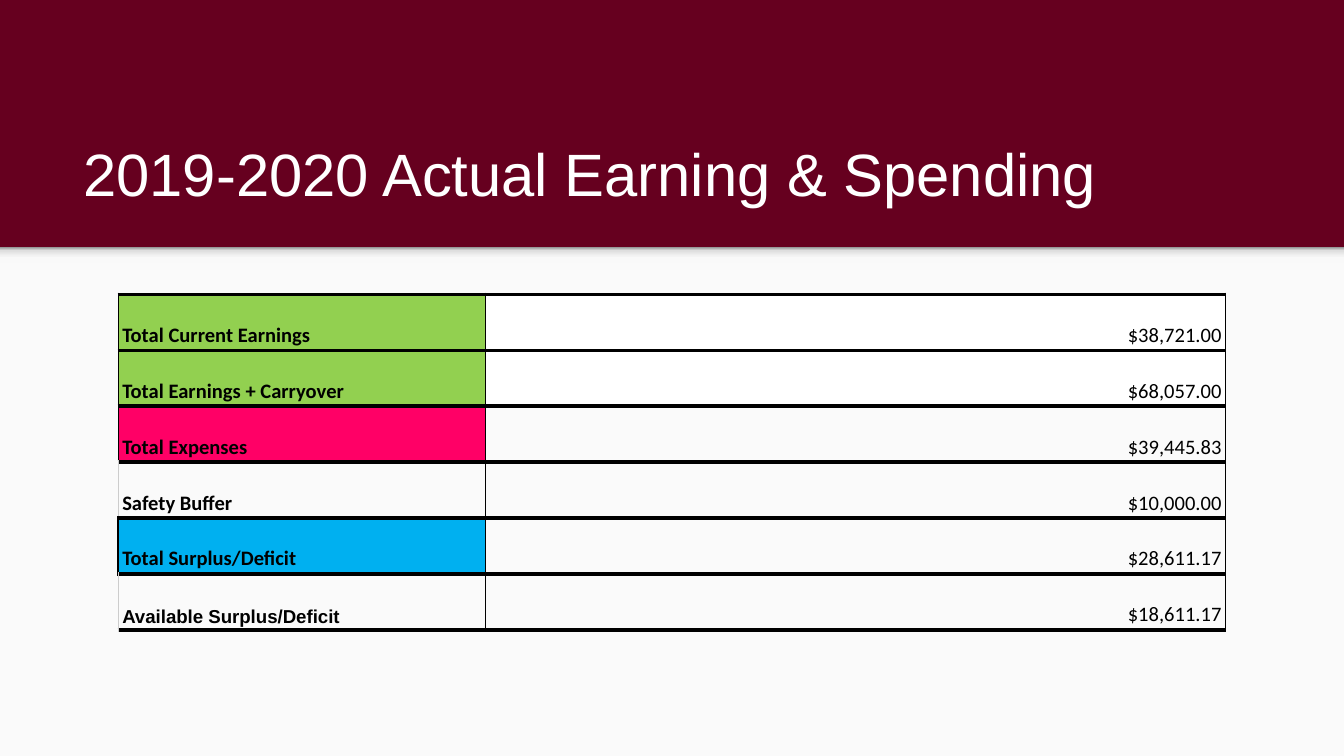
from copy import deepcopy
from dataclasses import dataclass

from lxml import etree
from pptx import Presentation
from pptx import util as u
from pptx.dml.color import RGBColor
from pptx.enum import shapes, text
from pptx.oxml.ns import qn


@dataclass(frozen=True)
class Theme:
    wine: str = "66001F"
    panel: str = "FAFAFA"
    white: str = "FFFFFF"
    ink: str = "000000"
    pale: str = "CCCCCC"
    green: str = "92D050"
    pink: str = "FF0066"
    blue: str = "00B0F0"
    head: str = "Arial"
    body: str = "Calibri"
    big: int = 32
    mid: int = 11
    small: int = 10


T = Theme()
WIDE = 10
HIGH = WIDE * 9 / 16
SPLIT = 1.84
COLS = (2.73, 5.51)
SHADE = ((0, "F9F9F9"), (0.36, "F9F9F9"), (0.8, "DEDEDE"), (1, "999999"))

# label, amount, label fill, amount fill, left edge colour and width
ROWS = (
    ("Total Current Earnings", "$38,721.00", T.green, T.white, T.ink, 0.75),
    ("Total Earnings + Carryover", "$68,057.00", T.green, T.white, T.ink, 0.75),
    ("Total Expenses", "$39,445.83", T.pink, None, T.ink, 0.75),
    ("Safety Buffer", "$10,000.00", None, None, T.pale, 0.75),
    ("Total Surplus/Deficit", "$28,611.17", T.blue, None, T.ink, 1.5),
    ("Available Surplus/Deficit", "$18,611.17", None, None, T.pale, 0.75),
)
TALL = 2.5
ROW = TALL / len(ROWS)


def rgb(code):
    return RGBColor.from_string(code)


def paint(fill, code):
    if code:
        fill.solid()
        fill.fore_color.rgb = rgb(code)
    else:
        fill.background()


def write(frame, words, size=T.mid, font=T.body, color=T.ink, bold=False,
          align=text.PP_ALIGN.LEFT, space=1.0):
    para = frame.paragraphs[0]
    para.alignment, para.line_spacing = align, space
    run = para.add_run()
    run.text = words
    run.font.size, run.font.name, run.font.bold = u.Pt(size), font, bold
    run.font.color.rgb = rgb(color)


def band(slide, top, high):
    """Add a plain rectangle across the full slide width."""
    box = slide.shapes.add_shape(shapes.MSO_SHAPE.RECTANGLE, 0, u.Inches(top),
                                 u.Inches(WIDE), u.Inches(high))
    box.shadow.inherit = False
    box.line.fill.background()
    return box


def shade(box):
    """Fill a shape with the soft shadow gradient, darkest at its top."""
    box.fill.gradient()
    box.fill.gradient_angle = 90
    stops = box._element.spPr.find(".//" + qn("a:gsLst"))
    for _ in SHADE[2:]:
        stops.append(deepcopy(stops[0]))
    for stop, (pos, code) in zip(box.fill.gradient_stops, SHADE):
        stop.position = pos
        stop.color.rgb = rgb(code)


def edge(cell, left, width):
    """Draw the cell's borders; only the left one varies."""
    props = cell._tc.get_or_add_tcPr()
    sides = (("L", left, width), ("R", T.ink, 0.75),
             ("T", T.ink, 2.25), ("B", T.ink, 2.25))
    for spot, (side, code, size) in enumerate(sides):
        line = etree.Element(qn("a:ln" + side), w=str(u.Pt(size)))
        solid = etree.SubElement(line, qn("a:solidFill"))
        etree.SubElement(solid, qn("a:srgbClr"), val=code)
        props.insert(spot, line)


def fit(cell, words, fill, left=T.ink, width=0.75, **style):
    cell.margin_left = cell.margin_right = u.Inches(0.03)
    cell.margin_top = cell.margin_bottom = u.Inches(0.02)
    cell.vertical_anchor = text.MSO_ANCHOR.BOTTOM
    write(cell.text_frame, words, space=1.15, **style)
    paint(cell.fill, fill)
    edge(cell, left, width)


def title(slide, words):
    box = slide.shapes.title
    box.left, box.top = u.Inches(0.52), u.Inches(0.81)
    box.width, box.height = u.Inches(8.99), u.Inches(0.84)
    frame = box.text_frame
    frame.margin_left = frame.margin_right = u.Inches(0.1)
    frame.margin_top = frame.margin_bottom = u.Inches(0.1)
    frame.vertical_anchor = text.MSO_ANCHOR.BOTTOM
    frame.auto_size = text.MSO_AUTO_SIZE.NONE
    frame.word_wrap = True
    write(frame, words, size=T.big, font=T.head, color=T.white)


def budget(slide):
    grid = slide.shapes.add_table(
        len(ROWS), len(COLS), u.Inches(0.88), u.Inches(2.19),
        u.Inches(sum(COLS)), u.Inches(TALL)).table
    grid.first_row = grid.horz_banding = False
    for col, wide in zip(grid.columns, COLS):
        col.width = u.Inches(wide)
    for num, (label, cash, tint, back, left, width) in enumerate(ROWS):
        grid.rows[num].height = u.Inches(ROW)
        last = num == len(ROWS) - 1
        fit(grid.cell(num, 0), label, tint, left, width, bold=True,
            size=T.small if last else T.mid, font=T.head if last else T.body)
        fit(grid.cell(num, 1), cash, back, align=text.PP_ALIGN.RIGHT)


def main():
    deck = Presentation()
    deck.slide_width, deck.slide_height = u.Inches(WIDE), u.Inches(HIGH)
    slide = deck.slides.add_slide(deck.slide_layouts[5])
    paint(slide.background.fill, T.wine)
    paint(band(slide, SPLIT, HIGH - SPLIT).fill, T.panel)
    shade(band(slide, SPLIT, 0.12))
    title(slide, "2019-2020 Actual Earning & Spending")
    budget(slide)
    deck.save("out.pptx")


if __name__ == "__main__":
    main()
